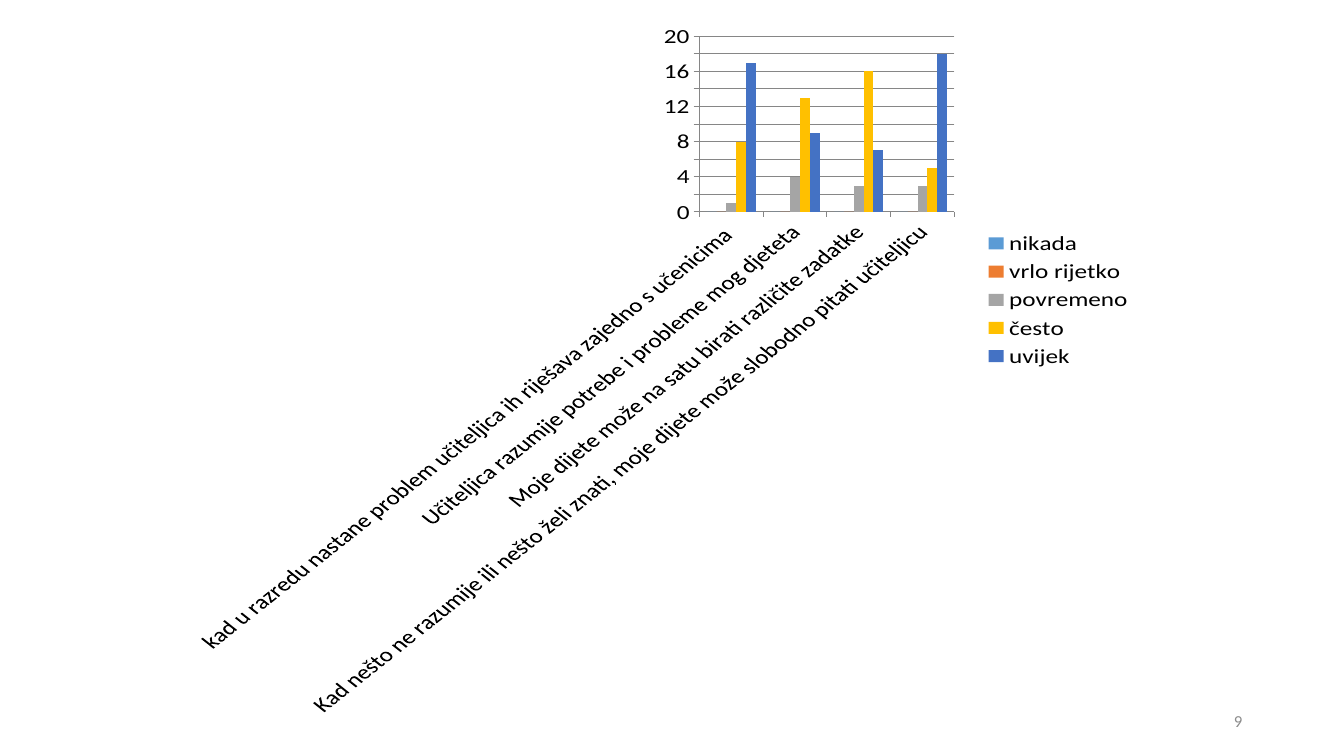
from pptx import Presentation
from pptx.chart.data import CategoryChartData
from pptx.dml.color import RGBColor
from pptx.enum import chart as ch, text
from pptx.util import Inches, Pt

# Content
QUESTIONS = [
    "kad u razredu nastane problem učiteljica ih riješava zajedno s učenicima ",
    "Učiteljica razumije potrebe i probleme mog djeteta",
    "Moje dijete može na satu birati različite zadatke",
    "Kad nešto ne razumije ili nešto želi znati, moje dijete može slobodno pitati učiteljicu",
]
ANSWERS = [
    ("nikada", (0, 0, 0, 0), "5B9BD5"),
    ("vrlo rijetko", (0, 0, 0, 0), "ED7D31"),
    ("povremeno", (1, 4, 3, 3), "A5A5A5"),
    ("često", (8, 13, 16, 5), "FFC000"),
    ("uvijek", (17, 9, 7, 18), "4472C4"),
]
PAGE = "9"
CHART_BOX = (1.82, 0.24, 9.53, 6.87)
PAGE_BOX = (9.42, 6.95, 3, 0.4)


def set_color(fmt, color):
    fmt.rgb = RGBColor.from_string(color)


def set_font(font, size, color):
    font.name = "Calibri"
    font.size = Pt(size)
    set_color(font.color, color)


prs = Presentation()
prs.slide_width, prs.slide_height = Inches(13.33), Inches(7.5)
s = prs.slides.add_slide(prs.slide_layouts[6])

# Survey chart
data = CategoryChartData()
data.categories = QUESTIONS
for name, values, _ in ANSWERS:
    data.add_series(name, values)
chart = s.shapes.add_chart(ch.XL_CHART_TYPE.COLUMN_CLUSTERED,
                           *map(Inches, CHART_BOX), data).chart
set_font(chart.font, 18, "000000")
chart.has_title = False
chart.has_legend = True
chart.legend.position = ch.XL_LEGEND_POSITION.RIGHT
chart.legend.include_in_layout = False

plot = chart.plots[0]
plot.gap_width = 150
plot.vary_by_categories = False
for series, (_, _, color) in zip(plot.series, ANSWERS):
    series.format.fill.solid()
    set_color(series.format.fill.fore_color, color)

# Axes and gridlines
chart.value_axis.has_major_gridlines = True
for part in (chart.category_axis, chart.value_axis, chart.value_axis.major_gridlines):
    set_color(part.format.line.color, "868686")
    part.format.line.width = Pt(0.75)
for axis in (chart.category_axis, chart.value_axis):
    axis.major_tick_mark = ch.XL_TICK_MARK.OUTSIDE

# Page number
tf = s.shapes.add_textbox(*map(Inches, PAGE_BOX)).text_frame
tf.word_wrap = True
tf.vertical_anchor = text.MSO_ANCHOR.MIDDLE
tf.text = PAGE
p = tf.paragraphs[0]
p.alignment = text.PP_ALIGN.RIGHT
set_font(p.runs[0].font, 12, "8C8C8C")

prs.save("out.pptx")
